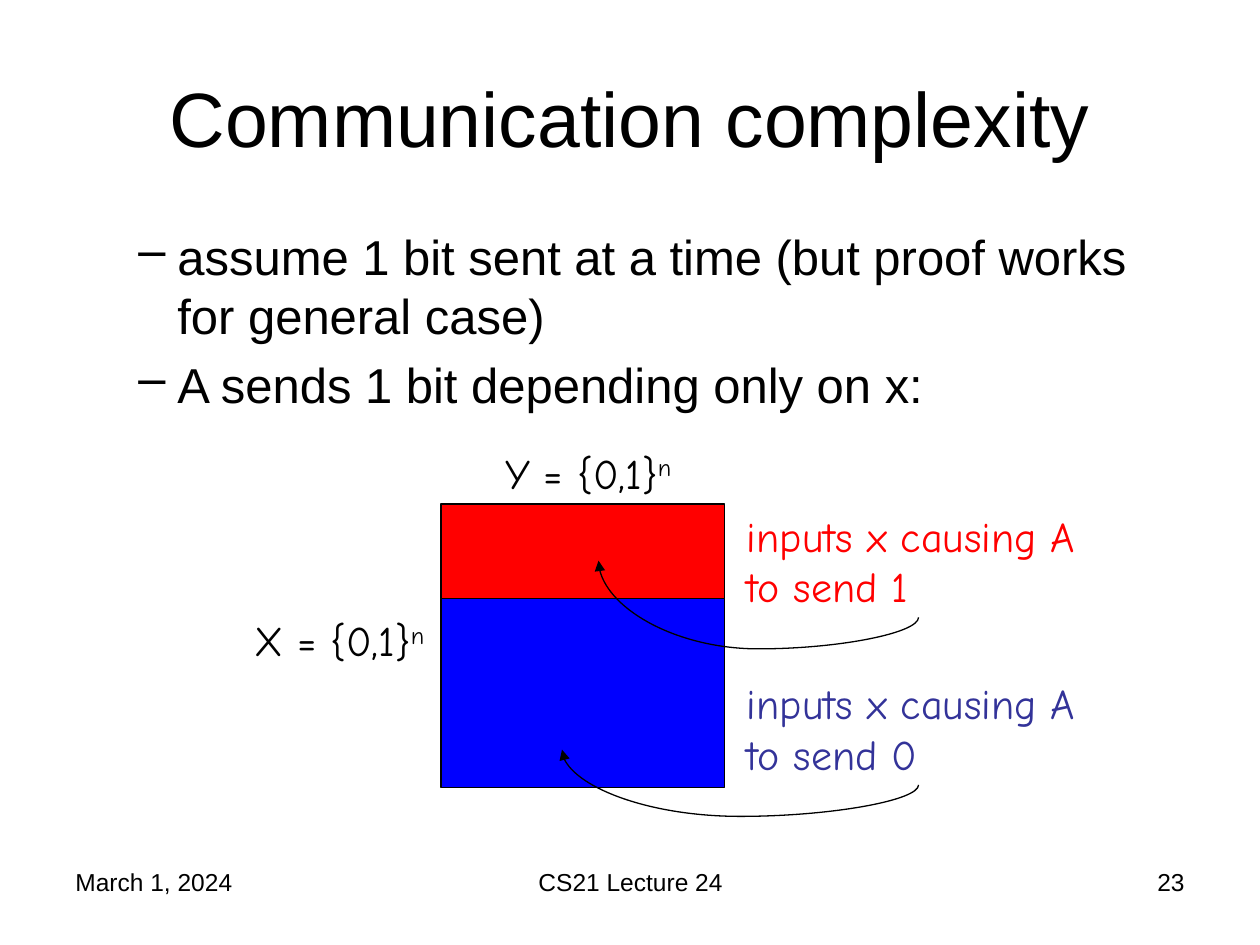
from lxml import etree
from pptx import Presentation
from pptx.dml.color import RGBColor
from pptx.enum.shapes import MSO_CONNECTOR, MSO_SHAPE
from pptx.enum.text import MSO_ANCHOR, PP_ALIGN
from pptx.oxml.ns import qn
from pptx.util import Inches, Pt

LEFT, MID, RIGHT = PP_ALIGN.LEFT, PP_ALIGN.CENTER, PP_ALIGN.RIGHT
TOP, MIDDLE = MSO_ANCHOR.TOP, MSO_ANCHOR.MIDDLE
RECT, CURVE = MSO_SHAPE.RECTANGLE, MSO_CONNECTOR.CURVE
BLACK, RED, BLUE, NAVY = "000000", "FF0000", "0000FF", "333399"
SANS, HAND = "Arial", "Comic Neue"

# Content: places are left, top, width, height in inches
TITLE = "Communication complexity"
POINTS = [
    "assume 1 bit sent at a time (but proof works for general case)",
    "A sends 1 bit depending only on x:",
]
FOOT = [
    ("March 1, 2024", (0.5, 6.83, 2.33, 0.52), LEFT),
    ("CS21 Lecture 24", (3.42, 6.83, 3.17, 0.52), MID),
    ("23", (7.17, 6.83, 2.33, 0.52), RIGHT),
]
BANDS = [(RED, 0.75), (BLUE, 1.5)]  # fill, height
BAND_LEFT, BAND_TOP, BAND_WIDTH = 3.5, 4, 2.25
AXES = [
    ("X = {0,1}", (1.92, 4.83, 2.08, 0.5)),
    ("Y = {0,1}", (3.91, 3.5, 1.59, 0.5)),
]
NOTES = [
    ("inputs x causing A to send 1", (5.83, 4, 2.92, 0.9), RED),
    ("inputs x causing A to send 0", (5.83, 5.33, 2.92, 0.9), NAVY),
]
ARROWS = [((7.29, 4.9), (4.75, 4.45)), ((7.29, 6.23), (4.46, 5.95))]
SAG = 0.25  # how far a curve dips below its start

deck = Presentation()
deck.slide_width, deck.slide_height = Inches(10), Inches(7.5)
slide = deck.slides.add_slide(deck.slide_layouts[6])
shapes = slide.shapes


def color(code):
    return RGBColor.from_string(code)


def inches(place):
    return [Inches(n) for n in place]


def add_run(para, text, size, face, ink):
    run = para.add_run()
    run.text = text
    run.font.color.rgb = color(ink)
    for key, value in {"size": Pt(size), "name": face}.items():
        setattr(run.font, key, value)
    return run


def add_text(lines, place, size, face=SANS, ink=BLACK, align=LEFT, anchor=TOP):
    frame = shapes.add_textbox(*inches(place)).text_frame
    for key, value in {"word_wrap": True, "vertical_anchor": anchor}.items():
        setattr(frame, key, value)
    for i, line in enumerate(lines):
        para = frame.add_paragraph() if i else frame.paragraphs[0]
        para.alignment = align
        add_run(para, line, size, face, ink)
    return frame.paragraphs


def set_line(line):
    line.color.rgb = color(BLACK)
    line.width = Pt(0.75)


def add_curve(start, end):
    """Curve that leaves downward, dips, and rises to its head."""
    (x1, y1), (x2, y2) = start, end
    wide, high = y1 - y2, x1 - x2  # sides before the quarter turn
    left, top = (x1 + x2 - wide) / 2, (y1 + y2 - high) / 2
    curve = shapes.add_connector(
        CURVE, *inches((left, top, left + wide, top + high)))
    set_line(curve.line)
    props = curve._element.spPr
    frame = props.find(qn("a:xfrm"))
    frame.set("rot", str(270 * 60000))
    frame.set("flipV", "1")
    bend = round(-SAG / wide * 100000)
    etree.SubElement(props.find(".//" + qn("a:avLst")), qn("a:gd"),
                     name="adj1", fmla=f"val {bend}")
    etree.SubElement(props.find(qn("a:ln")), qn("a:tailEnd"), type="triangle")
    etree.SubElement(props, qn("a:effectLst"))


# Footer
for text, place, align in FOOT:
    add_text([text], place, 14, align=align)

# Input matrix split in two bands
top = BAND_TOP
for fill, high in BANDS:
    band = shapes.add_shape(RECT, *inches((BAND_LEFT, top, BAND_WIDTH, high)))
    band.shadow.inherit = False
    band.fill.solid()
    band.fill.fore_color.rgb = color(fill)
    set_line(band.line)
    top += high

# Title and dashed points
add_text([TITLE], (0.5, 0.3, 9, 1.25), 44, align=MID, anchor=MIDDLE)
for para in add_text(POINTS, (0.5, 1.75, 9, 4.95), 28):
    para.space_before = Pt(5.6)
    props = para._p.get_or_add_pPr()
    props.set("marL", str(Inches(0.81)))
    props.set("indent", str(Inches(-0.31)))
    etree.SubElement(props, qn("a:buChar"), char="–")

# Axis labels with a raised n
for text, place in AXES:
    para = add_text([text], place, 24, HAND)[0]
    power = add_run(para, "n", 24, HAND, BLACK)
    power._r.get_or_add_rPr().set("baseline", "30000")

# Notes and their curved arrows
for text, place, ink in NOTES:
    add_text([text], place, 24, HAND, ink)
for start, end in ARROWS:
    add_curve(start, end)

deck.save("out.pptx")
